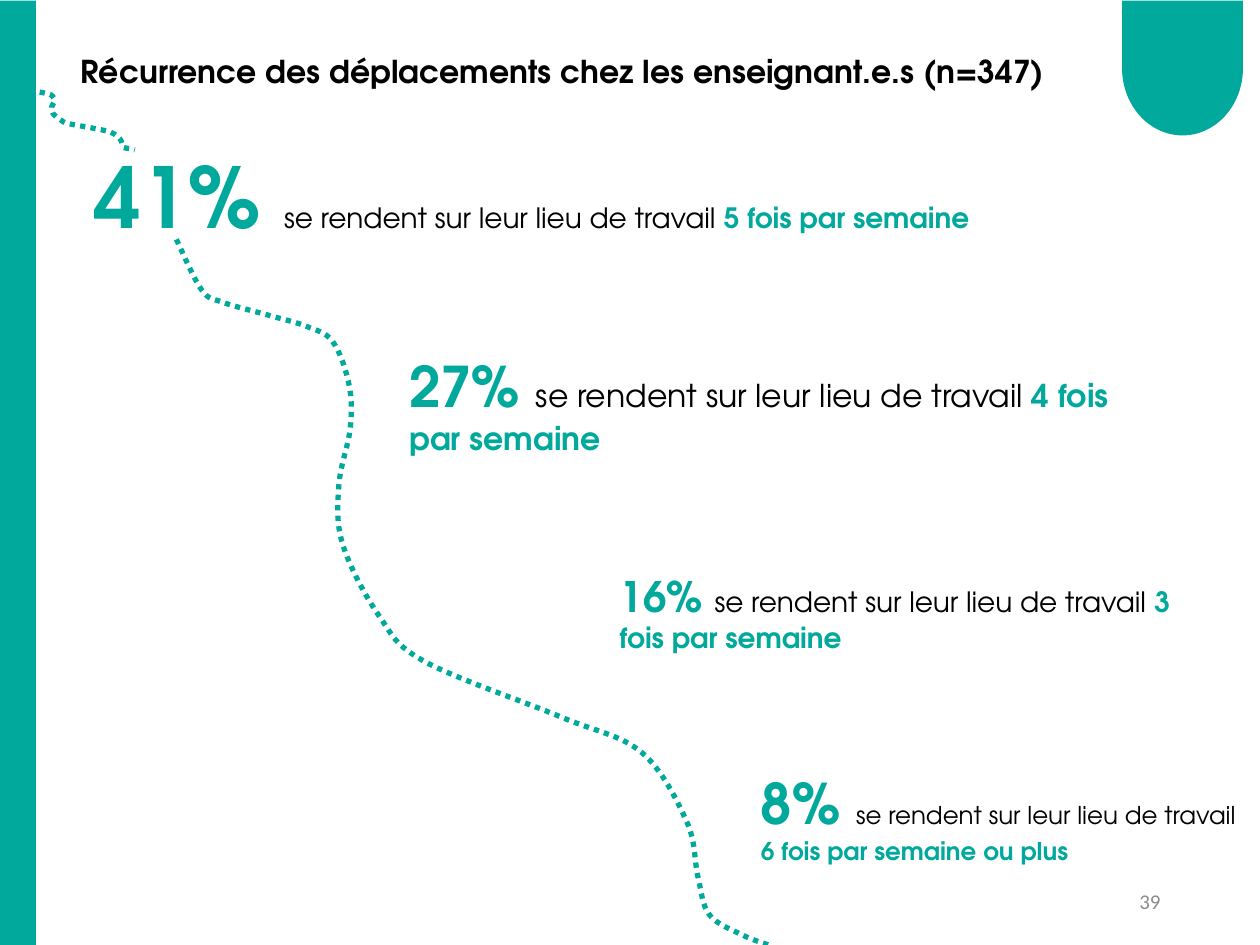
from lxml.etree import SubElement as Sub
from pptx import Presentation
from pptx.dml.color import RGBColor
from pptx.enum.dml import MSO_LINE as Dash
from pptx.enum.shapes import MSO_SHAPE as Kind
from pptx.enum.text import MSO_ANCHOR as Anchor, MSO_AUTO_SIZE as Fit, PP_ALIGN as Align
from pptx.oxml.ns import qn
from pptx.util import Inches, Pt

TEAL = RGBColor(0x00, 0xA9, 0x9B)
BLACK = RGBColor(0, 0, 0)
GRAY = RGBColor(0x8C, 0x8C, 0x8C)
FONT = "TeX Gyre Adventor"
COLS, ROWS = 100, 75
CELL = Inches(0.1)

FACTS = [
    ((6.5, 11, 88.6, 9.1), "41% ", 48, "5 fois par semaine", 16),
    ((59.4, 60.5, 40.1, 9.1), "8% ", 32, "6 fois par semaine ou plus", 14),
    ((31.5, 27.4, 57.6, 9.4), "27% ", 32, "4 fois par semaine", 18),
    ((48.2, 44.8, 49.6, 7.7), "16% ", 24, "3 fois par semaine", 16),
]

LEAD = [(0, 0), (0.4, 0.3), (0.8, 0.4), (1.5, 0.5), (2, 0.6), (2.4, 0.7),
        (2.7, 1), (2.7, 1.3), (2.5, 1.7), (2.6, 2.2), (3.2, 2.7), (3.8, 3),
        (5.9, 3.4), (7.2, 3.7), (7.9, 4.2), (8.1, 4.6), (8.2, 4.9),
        (8.7, 5), (9.1, 5.1)]
ROUTE = [(0, 0), (2, 4), (3.7, 5), (7.6, 6.1), (10.3, 6.9), (12.4, 8.1),
         (13.7, 11.5), (13.8, 15), (12.9, 19.5), (13.2, 24.2), (16.1, 29.9),
         (19.7, 33.5), (30.5, 37.9), (36.9, 40.7), (40.5, 46.2),
         (41.4, 50.6), (42.3, 53.6), (44.9, 55.2), (47, 56)]


def grid(*cells):
    return [round(c * CELL) for c in cells]


def put(item, **vals):
    for key, val in vals.items():
        setattr(item, key, val)


def move(shape, box):
    put(shape, **dict(zip(("left", "top", "width", "height"), grid(*box))))


def write(shape, runs, align=Align.LEFT, anchor=Anchor.TOP, fit=Fit.SHAPE_TO_FIT_TEXT):
    frame = shape.text_frame
    put(frame, word_wrap=True, auto_size=fit, vertical_anchor=anchor)
    para = frame.paragraphs[0]
    para.alignment = align
    for text, size, color, bold, name in runs:
        run = para.add_run()
        run.text = text
        put(run.font, size=Pt(size), bold=bold, name=name)
        run.font.color.rgb = color


def block(slide, kind, box, turn=0):
    shape = slide.shapes.add_shape(kind, *grid(*box))
    shape.rotation = turn
    shape.shadow.inherit = False
    shape.fill.solid()
    shape.fill.fore_color.rgb = TEAL
    shape.line.fill.background()


def bend(shape):
    knots = [(int(p.get("x")), int(p.get("y")))
             for p in shape.element.iter(qn("a:pt"))]
    ends = [knots[0], *knots, knots[-1]]
    lines = list(shape.element.iter(qn("a:lnTo")))
    for line, a, b, c, d in zip(lines, ends, ends[1:], ends[2:], ends[3:]):
        line.remove(line[0])
        line.tag = qn("a:cubicBezTo")
        near = [q + (r - p) / 6 for p, q, r in zip(a, b, c)]
        far = [q - (r - p) / 6 for p, q, r in zip(b, c, d)]
        for x, y in (near, far, c):
            Sub(line, qn("a:pt"), x=str(round(x)), y=str(round(y)))


def trail(slide, left, top, knots):
    pen = slide.shapes.build_freeform(*grid(left, top))
    pen.add_line_segments(
        [grid(left + x, top + y) for x, y in knots[1:]], close=False)
    shape = pen.convert_to_shape()
    bend(shape)
    shape.shadow.inherit = False
    shape.fill.background()
    shape.line.color.rgb = TEAL
    put(shape.line, width=Pt(3), dash_style=Dash.ROUND_DOT)


def head(slide, box):
    title = slide.shapes.title
    move(title, box)
    write(title, [("Récurrence des déplacements chez les enseignant.e.s (n=347)",
                   18, BLACK, True, FONT)])


def fact(slide, box, share, big, often, small):
    write(slide.shapes.add_textbox(*grid(*box)), [
        (share, big, TEAL, True, FONT),
        ("se rendent sur leur lieu de travail ", small, BLACK, False, FONT),
        (often, small, TEAL, True, FONT)])


def page(slide, box):
    write(slide.shapes.add_textbox(*grid(*box)),
          [("39", 12, GRAY, False, "Calibri")],
          Align.RIGHT, Anchor.MIDDLE, Fit.NONE)


def main():
    deck = Presentation()
    put(deck, slide_width=COLS * CELL, slide_height=ROWS * CELL)
    slide = deck.slides.add_slide(deck.slide_layouts[5])
    block(slide, Kind.RECTANGLE, (-36.1, 36.1, ROWS, 2.9), 90)
    head(slide, (5.4, 3.6, 92.4, 4))
    for item in FACTS:
        fact(slide, *item)
    trail(slide, 14, 19, ROUTE)
    trail(slide, 1.6, 6.8, LEAD)
    block(slide, Kind.FLOWCHART_DELAY, (88.5, 0.6, 10.7, 9.6), 90)
    page(slide, (70.6, 69.5, 22.5, 4))
    deck.save("out.pptx")


if __name__ == "__main__":
    main()
